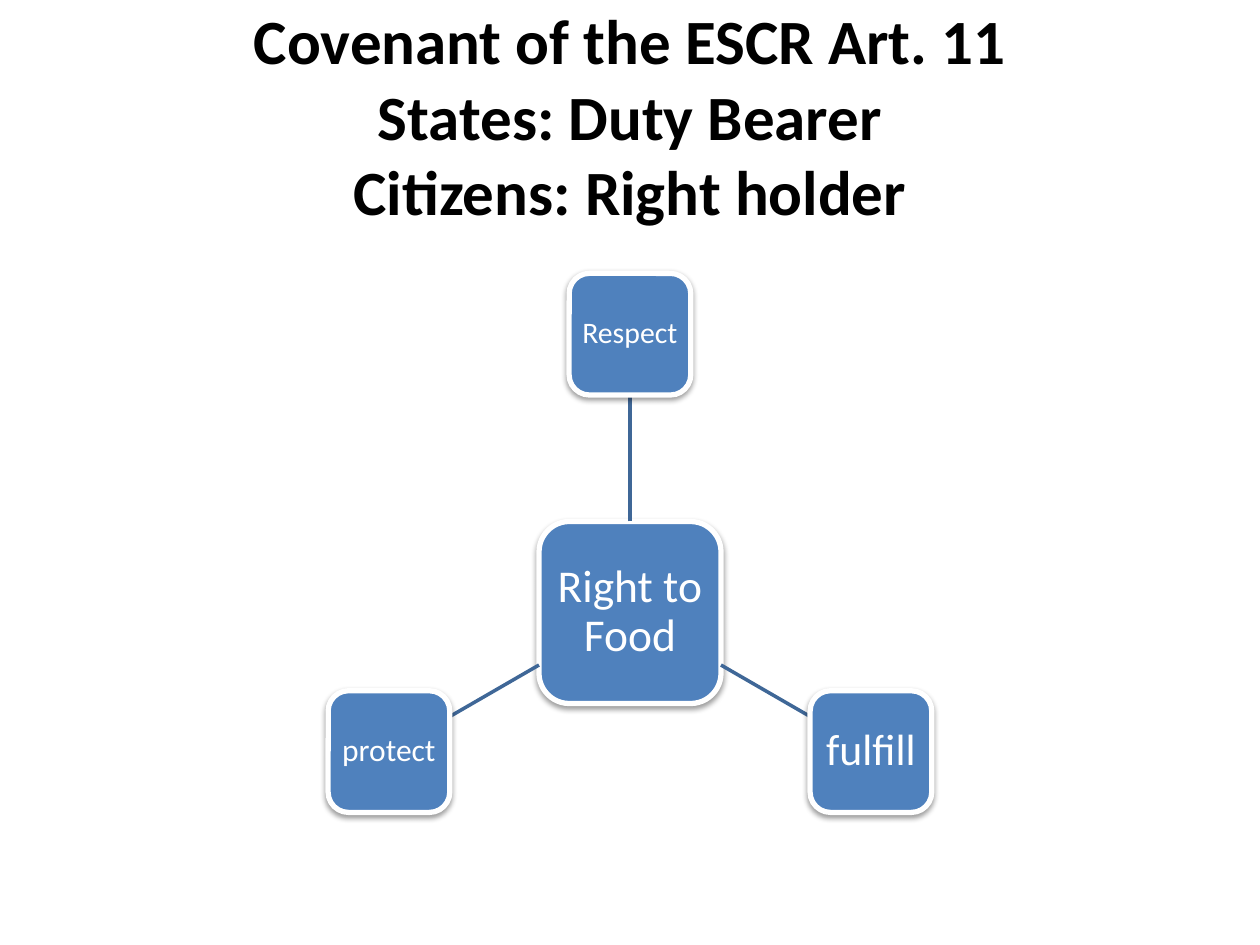
from dataclasses import dataclass
from math import cos, radians, sin

from lxml.etree import SubElement
from pptx import Presentation
from pptx.dml.color import RGBColor
from pptx.enum.shapes import MSO_CONNECTOR, MSO_SHAPE
from pptx.enum.text import MSO_ANCHOR, PP_ALIGN
from pptx.oxml import parse_xml
from pptx.oxml.ns import nsdecls, qn
from pptx.util import Pt


@dataclass(frozen=True)
class Theme:
    font: str = "Calibri"
    title_color: RGBColor = RGBColor(0, 0, 0)
    node_fill: RGBColor = RGBColor(0x4F, 0x81, 0xBD)
    node_text: RGBColor = RGBColor(0xFF, 0xFF, 0xFF)
    node_border: RGBColor = RGBColor(0xFF, 0xFF, 0xFF)
    spoke: RGBColor = RGBColor(0x3F, 0x67, 0x97)
    title_size: int = 36
    hub_size: int = 26
    respect_size: int = 17
    fulfill_size: int = 25
    protect_size: int = 18


class SlideBuilder:
    def __init__(self, slide, theme):
        self.slide = slide
        self.theme = theme

    def style_text(self, paragraph, size, color, bold=False):
        paragraph.alignment = PP_ALIGN.CENTER
        paragraph.font.name = self.theme.font
        paragraph.font.size = Pt(size)
        paragraph.font.bold = bold
        paragraph.font.color.rgb = color

    def title(self, lines, left, top, width, height):
        shape = self.slide.shapes.title
        shape.left, shape.top = Pt(left), Pt(top)
        shape.width, shape.height = Pt(width), Pt(height)
        frame = shape.text_frame
        frame.text = "\v".join(lines)
        frame.word_wrap = True
        frame.vertical_anchor = MSO_ANCHOR.MIDDLE
        frame.margin_bottom = Pt(47)
        self.style_text(frame.paragraphs[0], self.theme.title_size, self.theme.title_color, True)

    def add_shadow(self, shape):
        effects = parse_xml(
            f'<a:effectLst {nsdecls("a")}>'
            '<a:outerShdw blurRad="40000" dist="20000" dir="5400000" rotWithShape="0">'
            '<a:srgbClr val="000000"><a:alpha val="38000"/></a:srgbClr>'
            '</a:outerShdw></a:effectLst>'
        )
        properties = shape.element.spPr
        properties.replace(properties.find(qn("a:effectLst")), effects)

    def node(self, text, center_x, center_y, side, size):
        shape = self.slide.shapes.add_shape(
            MSO_SHAPE.ROUNDED_RECTANGLE,
            Pt(center_x - side / 2), Pt(center_y - side / 2), Pt(side), Pt(side),
        )
        shape.fill.solid()
        shape.fill.fore_color.rgb = self.theme.node_fill
        shape.line.color.rgb = self.theme.node_border
        shape.line.width = Pt(3)
        shape.shadow.inherit = False
        self.add_shadow(shape)
        frame = shape.text_frame
        frame.text = text
        frame.word_wrap = True
        frame.vertical_anchor = MSO_ANCHOR.MIDDLE
        inset = Pt(size * 0.18)
        frame.margin_left = frame.margin_right = inset
        frame.margin_top = frame.margin_bottom = inset
        paragraph = frame.paragraphs[0]
        paragraph.line_spacing = 0.9
        self.style_text(paragraph, size, self.theme.node_text)

    def spoke(self, start_x, start_y, end_x, end_y):
        connector = self.slide.shapes.add_connector(
            MSO_CONNECTOR.STRAIGHT, Pt(start_x), Pt(start_y), Pt(end_x), Pt(end_y)
        )
        connector.line.color.rgb = self.theme.spoke
        connector.line.width = Pt(2)
        SubElement(connector.element.spPr, qn("a:effectLst"))

    def radial_diagram(self, hub, satellites, center_x, center_y, radius, hub_side, side):
        self.node(hub, center_x, center_y, hub_side, self.theme.hub_size)
        for index, (text, size) in enumerate(satellites):
            angle = radians(-90 + index * 360 / len(satellites))
            step_x, step_y = cos(angle), sin(angle)
            reach = 2 * max(abs(step_x), abs(step_y))
            start = hub_side / reach
            end = radius - side / reach
            self.spoke(
                center_x + start * step_x, center_y + start * step_y,
                center_x + end * step_x, center_y + end * step_y,
            )
            self.node(text, center_x + radius * step_x, center_y + radius * step_y, side, size)


def main():
    presentation = Presentation()
    presentation.slide_width, presentation.slide_height = Pt(720), Pt(540)
    slide = presentation.slides.add_slide(presentation.slide_layouts[5])
    theme = Theme()
    builder = SlideBuilder(slide, theme)
    builder.title(
        ["Covenant of the ESCR Art. 11", "States: Duty Bearer", "Citizens: Right holder"],
        36, 26, 648, 123,
    )
    satellites = [
        ("Respect", theme.respect_size),
        ("fulfill", theme.fulfill_size),
        ("protect", theme.protect_size),
    ]
    builder.radial_diagram("Right to Food", satellites, 360, 350, 159, 104, 69.5)
    presentation.save("out.pptx")


if __name__ == "__main__":
    main()
